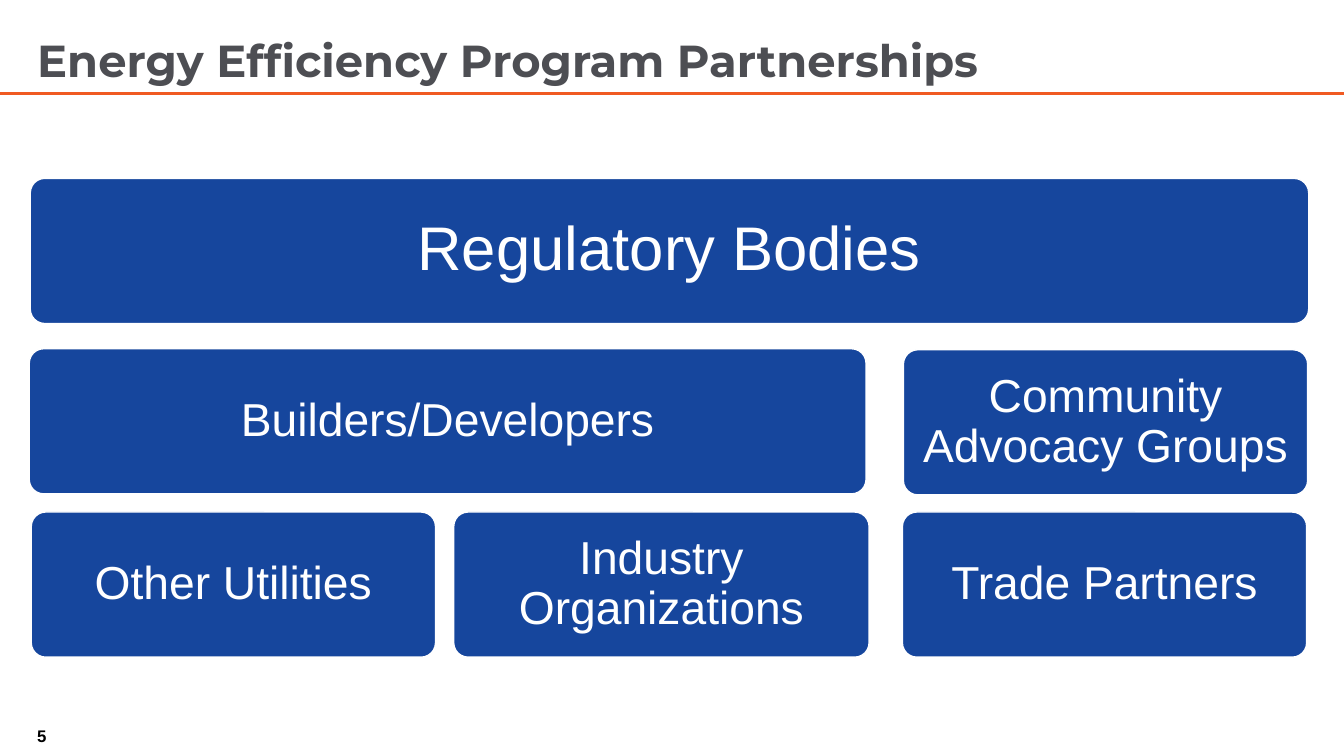
from lxml import etree
from pptx import Presentation
from pptx.dml.color import RGBColor
from pptx.enum.shapes import MSO_CONNECTOR, MSO_SHAPE
from pptx.enum.text import MSO_ANCHOR, PP_ALIGN
from pptx.oxml.ns import qn
from pptx.util import Inches, Pt

STRAIGHT = MSO_CONNECTOR.STRAIGHT
ROUNDED = MSO_SHAPE.ROUNDED_RECTANGLE
TOP, MIDDLE = MSO_ANCHOR.TOP, MSO_ANCHOR.MIDDLE
CENTER, LEFT = PP_ALIGN.CENTER, PP_ALIGN.LEFT

WHITE = RGBColor(0xFF, 0xFF, 0xFF)
BLACK = RGBColor(0x00, 0x00, 0x00)
BLUE = RGBColor(0x16, 0x46, 0x9D)
ORANGE = RGBColor(0xF0, 0x5A, 0x22)
GRAY = RGBColor(0x4D, 0x4E, 0x53)

SLIDE_W = 13.33
BOX_H = 1.44

# left, top, width, label, text size, inset
PARTNERS = [
    (0.30, 1.77, 12.68, "Regulatory Bodies", 44, 0.18),
    (0.29, 3.46, 8.30, "Builders/Developers", 33, 0.14),
    (8.96, 3.47, 4.01, "Community Advocacy Groups", 33, 0.14),
    (0.31, 5.08, 4.01, "Other Utilities", 33, 0.14),
    (4.50, 5.08, 4.12, "Industry Organizations", 33, 0.14),
    (8.95, 5.08, 4.01, "Trade Partners", 33, 0.14),
]


def write(sp, text, size, font, color, bold=False, align=LEFT, anchor=MIDDLE, spacing=1.0):
    tf = sp.text_frame
    tf.word_wrap = True
    tf.vertical_anchor = anchor
    p = tf.paragraphs[0]
    p.alignment = align
    p.line_spacing = spacing
    r = p.add_run()
    r.text = text
    r.font.size = Pt(size)
    r.font.name = font
    r.font.bold = bold
    r.font.color.rgb = color


prs = Presentation()
prs.slide_width = Inches(SLIDE_W)
prs.slide_height = Inches(7.5)
s = prs.slides.add_slide(prs.slide_layouts[6])

rule = s.shapes.add_connector(STRAIGHT, Inches(0), Inches(0.93), Inches(SLIDE_W), Inches(0.93))
rule.line.color.rgb = ORANGE
rule.line.width = Pt(2)
etree.SubElement(rule._element.spPr, qn("a:effectLst"))

title = s.shapes.add_textbox(Inches(0.27), Inches(0.34), Inches(11.5), Inches(0.94))
write(title, "Energy Efficiency Program Partnerships", 32, "Montserrat", GRAY,
      bold=True, anchor=TOP, spacing=0.9)

for left, top, width, label, size, inset in PARTNERS:
    box = s.shapes.add_shape(ROUNDED, Inches(left), Inches(top), Inches(width), Inches(BOX_H))
    box.adjustments[0] = 0.1
    box.shadow.inherit = False
    box.fill.solid()
    box.fill.fore_color.rgb = BLUE
    box.line.color.rgb = WHITE
    box.line.width = Pt(1)
    tf = box.text_frame
    tf.margin_left = tf.margin_right = tf.margin_top = tf.margin_bottom = Inches(inset)
    write(box, label, size, "Arial", WHITE, align=CENTER, spacing=0.9)

number = s.shapes.add_textbox(Inches(0.27), Inches(7.1), Inches(3), Inches(0.4))
write(number, "5", 12, "Arial", BLACK, bold=True)

prs.save("out.pptx")
